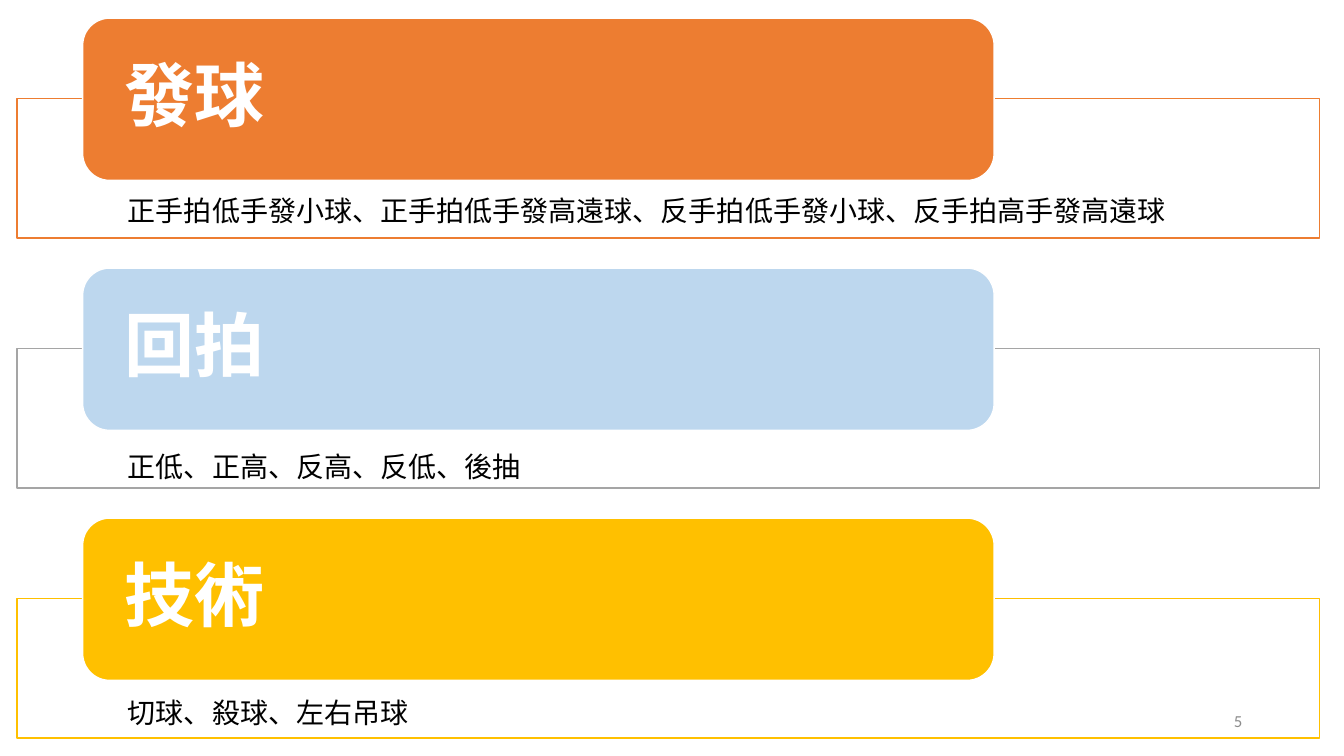
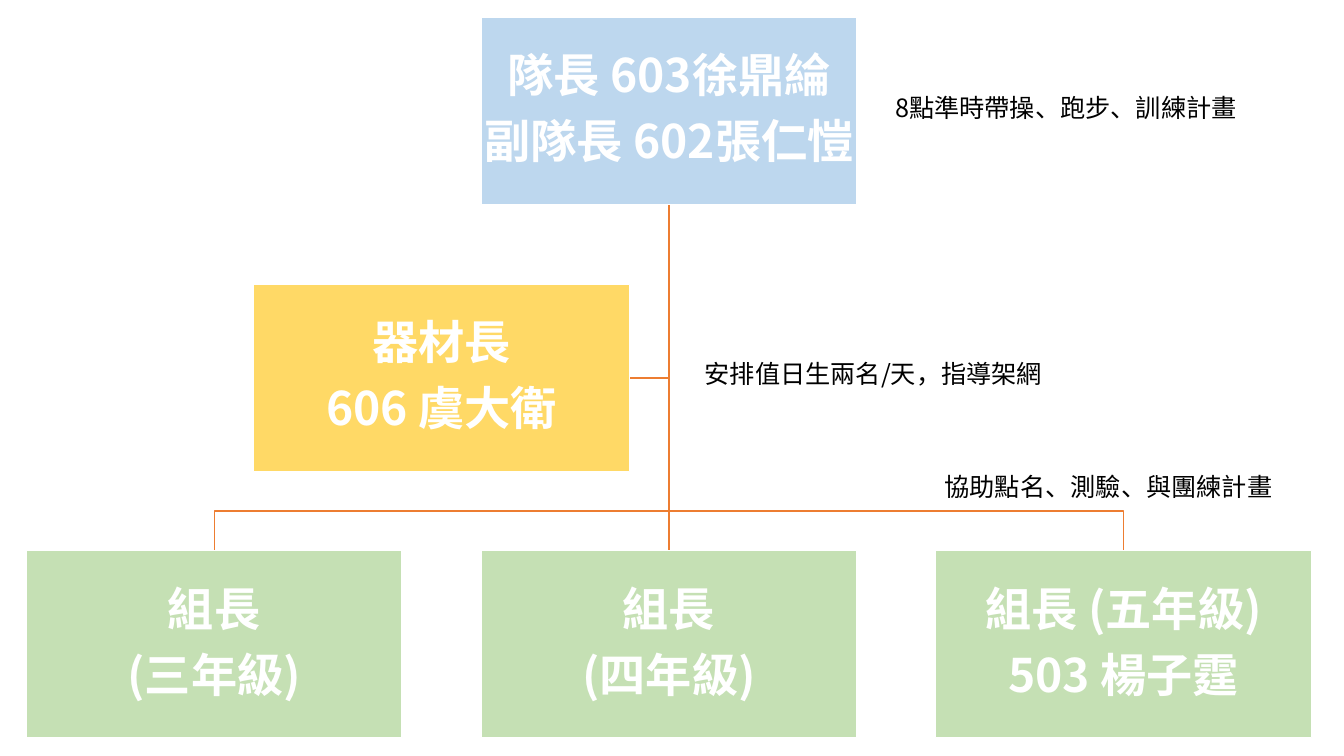
import pptx
import pptx.util
import pptx.dml.color
import pptx.enum.shapes
import pptx.enum.text
import pptx.oxml.ns
import lxml.etree

Inches = pptx.util.Inches
Pt = pptx.util.Pt
SHAPE = pptx.enum.shapes.MSO_SHAPE
ALIGN = pptx.enum.text.PP_ALIGN
MIDDLE = pptx.enum.text.MSO_ANCHOR.MIDDLE
qn = pptx.oxml.ns.qn

HAN = "Noto Sans CJK SC"
INK = {
    "white": "FFFFFF", "black": "000000", "mute": "8C8C8C",
    "orange": "ED7D31", "gray": "A5A5A5", "gold": "FFC000",
    "blue": "BDD7EE", "sand": "FFD966", "green": "C5E0B4",
}


class Deck:
    """Holds the style and the current slide."""

    def __init__(self):
        self.prs = pptx.Presentation()
        self.prs.slide_width = Inches(13.33)
        self.prs.slide_height = Inches(7.5)
        self.slide = None

    def page(self):
        self.slide = self.prs.slides.add_slide(self.prs.slide_layouts[6])

    def color(self, name):
        return pptx.dml.color.RGBColor.from_string(INK[name])

    def line(self, shape, name):
        shape.line.color.rgb = self.color(name)
        shape.line.width = Pt(1)

    def text(self, frame, lines, size, ink, bold=False, align=ALIGN.LEFT,
             font=HAN):
        frame.word_wrap = True
        for i, words in enumerate(lines):
            para = frame.paragraphs[0] if i == 0 else frame.add_paragraph()
            para.text = words
            para.alignment = align
            if bold:
                para.line_spacing = 0.9
                para.space_after = Pt(size * 0.35)
            face = para.font
            face.size, face.bold, face.name = Pt(size), bold, font
            face.color.rgb = self.color(ink)
            # East Asian glyphs take their own typeface
            east = lxml.etree.SubElement(face._rPr, qn("a:ea"))
            east.set("typeface", font)

    def box(self, x, y, w, h, fill, edge="white", kind=SHAPE.RECTANGLE):
        shape = self.slide.shapes.add_shape(
            kind, Inches(x), Inches(y), Inches(w), Inches(h))
        shape.shadow.inherit = False
        shape.fill.solid()
        shape.fill.fore_color.rgb = self.color(fill)
        self.line(shape, edge)
        return shape

    def label(self, shape, lines, size, side, top, align):
        frame = shape.text_frame
        frame.margin_left = frame.margin_right = Inches(side)
        frame.margin_top = frame.margin_bottom = Inches(top)
        frame.vertical_anchor = MIDDLE
        self.text(frame, lines, size, "white", True, align)

    def note(self, x, y, w, h, words, size, ink="black", **style):
        area = self.slide.shapes.add_textbox(
            Inches(x), Inches(y), Inches(w), Inches(h))
        self.text(area.text_frame, [words], size, ink, **style)
        return area

    def wire(self, x1, y1, x2, y2, name):
        link = self.slide.shapes.add_connector(
            pptx.enum.shapes.MSO_CONNECTOR.STRAIGHT,
            Inches(x1), Inches(y1), Inches(x2), Inches(y2))
        self.line(link, name)
        lxml.etree.SubElement(link._element.spPr, qn("a:effectLst"))

    def bend(self, points, name):
        spots = [(Inches(x), Inches(y)) for x, y in points]
        pen = self.slide.shapes.build_freeform(*spots[0])
        pen.add_line_segments(spots[1:], close=False)
        shape = pen.convert_to_shape()
        shape.shadow.inherit = False
        shape.fill.background()
        self.line(shape, name)


def skills(deck):
    deck.page()
    # Frames with title bars
    rows = [
        ("發球", "orange", "orange", 1.87,
         "正手拍低手發小球、正手拍低手發高遠球、反手拍低手發小球、反手拍高手發高遠球"),
        ("回拍", "blue", "gray", 4.41, "正低、正高、反高、反低、後抽"),
        ("技術", "gold", "gold", 6.85, "切球、殺球、左右吊球"),
    ]
    for i, (title, fill, edge, low, words) in enumerate(rows):
        top = 0.18 + 2.48 * i
        deck.box(0.17, top + 0.8, 12.92, 1.38, "white", edge)
        bar = deck.box(0.82, top, 9.04, 1.61, fill,
                       kind=SHAPE.ROUNDED_RECTANGLE)
        deck.label(bar, [title], 50, 0.34, 0, ALIGN.LEFT)
        deck.note(1.17, low, 11.41, 0.44, words, 20)
    # Page number
    num = deck.note(9.42, 6.95, 3, 0.4, "5", 12, "mute",
                    align=ALIGN.RIGHT, font="Calibri")
    num.text_frame.vertical_anchor = MIDDLE


def team(deck):
    deck.page()
    wide, high = 3.73, 1.86
    cols = [0.26 + 4.51 * i for i in range(3)]
    mids = [x + wide / 2 for x in cols]
    hub = mids[1]
    head, aide, base = 0.17, 2.82, 5.46
    gap = 0.39
    foot, fork = head + high, base - gap
    # Links
    side = aide + high / 2
    deck.bend([(hub, foot), (hub, side), (hub - gap, side)], "orange")
    for mid in (mids[2], mids[0]):
        deck.bend([(hub, foot), (hub, fork), (mid, fork), (mid, base)],
                  "orange")
    deck.wire(hub, foot, hub, base, "orange")
    # Roles
    roles = [
        (cols[1], head, "blue", ["隊長 603徐鼎綸", "副隊長 602張仁愷"]),
        (cols[0], base, "green", ["組長", "(三年級)"]),
        (cols[1], base, "green", ["組長", "(四年級)"]),
        (cols[2], base, "green", ["組長 (五年級)", "503 楊子霆"]),
        (hub - gap - wide, aide, "sand", ["器材長", "606 虞大衛"]),
    ]
    for x, y, fill, lines in roles:
        card = deck.box(x, y, wide, high, fill)
        deck.label(card, lines, 33, 0.02, 0.02, ALIGN.CENTER)
    # Duties
    duties = [
        (8.78, 0.87, "8點準時帶操、跑步、訓練計畫"),
        (6.89, 3.51, "安排值日生兩名/天，指導架網"),
        (9.27, 4.63, "協助點名、測驗、與團練計畫"),
    ]
    for x, y, words in duties:
        deck.note(x, y, 3.78, 0.4, words, 18)


def main():
    deck = Deck()
    skills(deck)
    team(deck)
    deck.prs.save("out.pptx")


if __name__ == "__main__":
    main()
